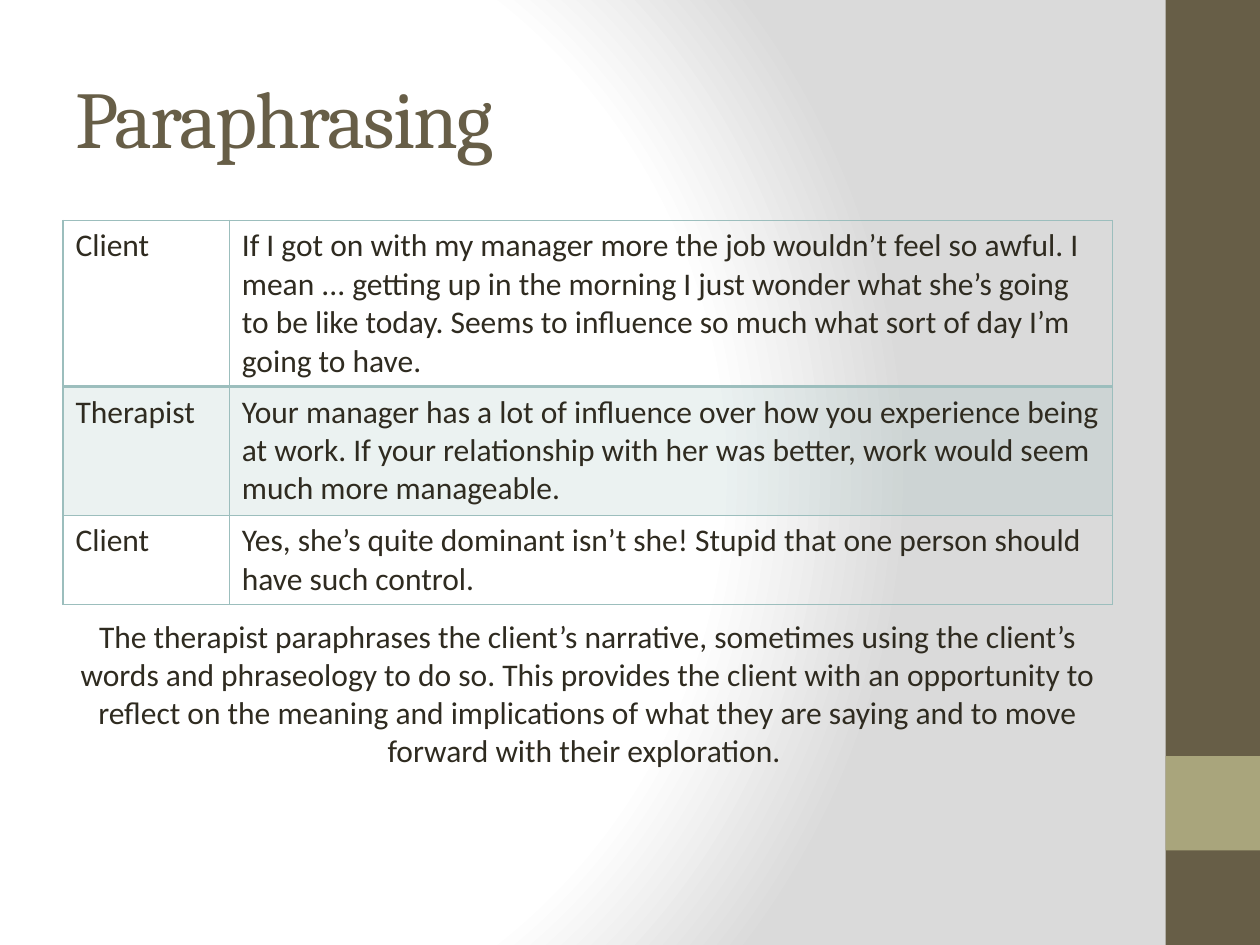
from dataclasses import dataclass

from lxml import etree
from pptx import Presentation
from pptx import util as u
from pptx.dml.color import RGBColor
from pptx.enum import shapes, text
from pptx.oxml import parse_xml
from pptx.oxml.ns import nsdecls, qn


@dataclass(frozen=True)
class Theme:
    olive: str = "675E47"
    sage: str = "A9A57C"
    teal: str = "9CBEBD"
    ink: str = "2F2B20"
    glow: str = "FFFFFF"
    edge: str = "DADADA"
    heading_font: str = "Cambria"
    body_font: str = "Calibri"
    title_size: int = 46
    body_size: int = 18
    band_opacity: int = 20


THEME = Theme()

DIALOGUE = [
    ("Client", "If I got on with my manager more the job wouldn’t feel so awful. "
               "I mean ... getting up in the morning I just wonder what she’s going "
               "to be like today. Seems to influence so much what sort of day I’m "
               "going to have."),
    ("Therapist", "Your manager has a lot of influence over how you experience being "
                  "at work. If your relationship with her was better, work would seem "
                  "much more manageable."),
    ("Client", "Yes, she’s quite dominant isn’t she! Stupid that one person should "
               "have such control."),
]
SUMMARY = ("The therapist paraphrases the client’s narrative, sometimes using the "
           "client’s words and phraseology to do so. This provides the client with an "
           "opportunity to reflect on the meaning and implications of what they are "
           "saying and to move forward with their exploration. ")


def inches(*lengths):
    return [u.Inches(length) for length in lengths]


def write(frame, words, *, font=THEME.body_font, size=THEME.body_size,
          color=THEME.ink, align=text.PP_ALIGN.LEFT,
          anchor=text.MSO_ANCHOR.TOP, tracking=0):
    """Put one formatted paragraph in a text frame; tracking is in points."""
    frame.word_wrap = True
    frame.vertical_anchor = anchor
    para = frame.paragraphs[0]
    para.alignment = align
    span = para.add_run()
    span.text = words
    span.font.name = font
    span.font.size = u.Pt(size)
    span.font.color.rgb = RGBColor.from_string(color)
    if tracking:
        span.font._element.set("spc", str(tracking * 100))


def add_text(page, box, words, **style):
    write(page.shapes.add_textbox(*inches(*box)).text_frame, words, **style)


def paint_background(page):
    """Radial gradient centred towards the left of the page."""
    page.background.fill.gradient()
    gradient = page._element.find(".//" + qn("a:gradFill"))
    stops = "".join(
        f'<a:gs pos="{place * 1000}"><a:srgbClr val="{color}"/></a:gs>'
        for place, color in ((0, THEME.glow), (75, THEME.glow), (100, THEME.edge)))
    gradient.getparent().replace(gradient, parse_xml(
        f'<a:gradFill {nsdecls("a")} rotWithShape="1"><a:gsLst>{stops}</a:gsLst>'
        '<a:path path="circle"><a:fillToRect l="20000" t="50000" r="100000" '
        'b="50000"/></a:path></a:gradFill>'))


def add_sidebar(page, box):
    """Full-height strip with a square accent one width above its foot."""
    left, top, width, height = box
    accent = (left, top + height - 2 * width, width, width)
    for place, color in ((box, THEME.olive), (accent, THEME.sage)):
        block = page.shapes.add_shape(shapes.MSO_SHAPE.RECTANGLE, *inches(*place))
        block.shadow.inherit = False
        block.fill.solid()
        block.fill.fore_color.rgb = RGBColor.from_string(color)
        block.line.fill.background()


def border_cell(cell, **widths):
    """Draw the cell's edges; widths maps L, R, T and B to points."""
    properties = cell._tc.get_or_add_tcPr()
    for side, width in widths.items():
        properties.append(parse_xml(
            f'<a:ln{side} {nsdecls("a")} w="{u.Pt(width)}"><a:solidFill>'
            f'<a:srgbClr val="{THEME.teal}"/></a:solidFill></a:ln{side}>'))


def tint_cell(cell):
    cell.fill.solid()
    cell.fill.fore_color.rgb = RGBColor.from_string(THEME.teal)
    color = cell._tc.tcPr.find(qn("a:solidFill")).find(qn("a:srgbClr"))
    etree.SubElement(color, qn("a:alpha")).set("val", str(THEME.band_opacity * 1000))


def add_dialogue(page, box, lines, label_width, row_heights):
    table = page.shapes.add_table(len(lines), 2, *inches(*box)).table
    table.first_row = table.horz_banding = False
    for column, width in zip(table.columns, (label_width, box[2] - label_width)):
        column.width = u.Inches(width)
    for index, (line, height) in enumerate(zip(lines, row_heights)):
        table.rows[index].height = u.Inches(height)
        for cell, words in zip(table.rows[index].cells, line):
            write(cell.text_frame, words)
            border_cell(cell, L=1, R=1, T=2 if index == 1 else 1,
                        B=2 if index == 0 else 1)
            if index % 2:
                tint_cell(cell)
            else:
                cell.fill.background()


def build_dialogue_page(page):
    left, width = 0.5, 8.33
    paint_background(page)
    add_sidebar(page, (9.25, 0, 0.75, 7.5))
    add_text(page, (left, 0.3, width, 1.25), "Paraphrasing",
             font=THEME.heading_font, size=THEME.title_size, color=THEME.olive,
             anchor=text.MSO_ANCHOR.MIDDLE, tracking=-1)
    add_dialogue(page, (left, 1.75, width, 3.05), DIALOGUE,
                 label_width=1.32, row_heights=(1.32, 1.02, 0.71))
    add_text(page, (left, 4.85, width, 1.62), SUMMARY, align=text.PP_ALIGN.CENTER)


def main():
    deck = Presentation()
    deck.slide_width, deck.slide_height = inches(10, 7.5)
    build_dialogue_page(deck.slides.add_slide(deck.slide_layouts[6]))
    deck.save("out.pptx")


if __name__ == "__main__":
    main()
